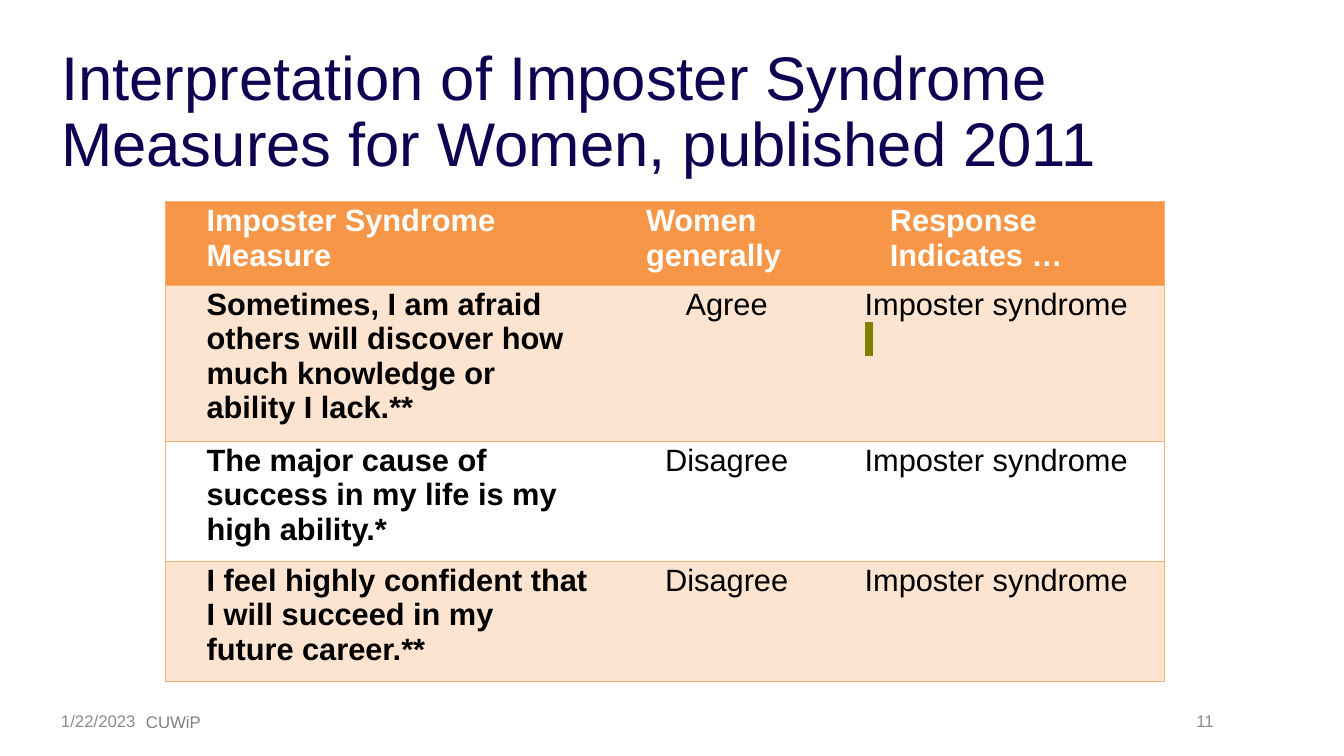
"""Build the slide on imposter syndrome measures for women."""
from dataclasses import dataclass

from lxml import etree
from pptx import Presentation
from pptx import util as u
from pptx.dml import color as dml
from pptx.enum import text as t
from pptx.oxml import ns

Pt = u.Pt
Align = t.PP_ALIGN
Anchor = t.MSO_ANCHOR


@dataclass(frozen=True)
class Theme:
    font: str = "Arial"
    title: str = "0F0051"
    head: str = "F79646"
    band: str = "FDE4D0"
    plain: str = "FFFFFF"
    ink: str = "000000"
    rule: str = "F9B074"
    mark: str = "808000"
    date: str = "8C8C8C"
    event: str = "808080"
    large: float = 44
    mid: float = 22
    small: float = 12


@dataclass(frozen=True)
class Box:
    left: float
    top: float
    width: float
    height: float


@dataclass(frozen=True)
class Note:
    words: str
    box: Box
    color: str
    align: Align = Align.LEFT
    anchor: Anchor = Anchor.MIDDLE


@dataclass(frozen=True)
class Row:
    height: float
    fill: str
    words: tuple[str, str, str]
    marked: bool = False


LOOK = Theme()
TITLE = "Interpretation of Imposter Syndrome Measures for Women, published 2011"
TITLE_BOX = Box(36.5, 29, 875.5, 104.5)
GRID = Box(118.1, 144, 713.5, 342.7)
COLS = (313.9, 174.2, 225.4)
NOTES = (
    Note("1/22/2023", Box(36.5, 500.5, 216, 28.8), LOOK.date),
    Note("CUWiP", Box(97.2, 504.7, 324, 28.8), LOOK.event, anchor=Anchor.TOP),
    Note("11", Box(658, 500.5, 216, 28.8), LOOK.date, Align.RIGHT),
)
ROWS = (
    Row(59.8, LOOK.head, ("Imposter Syndrome Measure", "Women generally", "Response Indicates …")),
    Row(111.6, LOOK.band, ("Sometimes, I am afraid others will discover how much knowledge or ability I lack.**",
                           "Agree", "Imposter syndrome"), True),
    Row(85.7, LOOK.plain, ("The major cause of success in my life is my high ability.*",
                           "Disagree", "Imposter syndrome")),
    Row(85.7, LOOK.band, ("I feel highly confident that I will succeed in my future career.**",
                          "Disagree", "Imposter syndrome")),
)


def place(shape, box: Box) -> None:
    shape.left, shape.top = Pt(box.left), Pt(box.top)
    shape.width, shape.height = Pt(box.width), Pt(box.height)


def write(para, words: str, size: float, color: str, bold: bool = False):
    run = para.add_run()
    run.text = words
    font = run.font
    font.size, font.bold, font.name = Pt(size), bold, LOOK.font
    font.color.rgb = dml.RGBColor.from_string(color)
    return run


def tint(parent, tag: str, color: str):
    node = etree.SubElement(parent, ns.qn(tag))
    etree.SubElement(node, ns.qn("a:srgbClr"), val=color)
    return node


def mark(run, color: str) -> None:
    props = run.font.fill._xPr
    props.find(ns.qn("a:solidFill")).addnext(tint(props, "a:highlight", color))


def edge(cell, col: int) -> None:
    props = cell._tc.get_or_add_tcPr()
    shown = {"L": col == 0, "R": col == len(COLS) - 1, "T": True, "B": True}
    for spot, (side, seen) in enumerate(shown.items()):
        line = etree.Element(ns.qn(f"a:ln{side}"), w=str(Pt(1)))
        if seen:
            tint(line, "a:solidFill", LOOK.rule)
        else:
            etree.SubElement(line, ns.qn("a:noFill"))
        props.insert(spot, line)


def fill_cell(cell, row: Row, col: int) -> None:
    head = row is ROWS[0]
    cell.fill.solid()
    cell.fill.fore_color.rgb = dml.RGBColor.from_string(row.fill)
    cell.margin_left = cell.margin_right = Pt(11.5)
    cell.margin_top, cell.margin_bottom = Pt(1.5), Pt(0)
    cell.vertical_anchor = Anchor.TOP
    edge(cell, col)
    para = cell.text_frame.paragraphs[0]
    if head or col == 0:
        para._p.get_or_add_pPr().set("marL", str(Pt(18)))
    para.alignment = Align.CENTER if col == 1 and not head else Align.LEFT
    color = LOOK.plain if head else LOOK.ink
    write(para, row.words[col], LOOK.mid, color, head or col == 0)
    if row.marked and col == 2:
        extra = cell.text_frame.add_paragraph()
        mark(write(extra, " ", LOOK.mid, color), LOOK.mark)


def draw_title(slide) -> None:
    shape = slide.shapes.title
    place(shape, TITLE_BOX)
    frame = shape.text_frame
    frame.word_wrap, frame.auto_size = True, t.MSO_AUTO_SIZE.NONE
    frame.vertical_anchor = Anchor.MIDDLE
    para = frame.paragraphs[0]
    para.alignment, para.line_spacing = Align.LEFT, 0.9
    write(para, TITLE, LOOK.large, LOOK.title)


def draw_note(slide, note: Note) -> None:
    box = note.box
    frame = slide.shapes.add_textbox(
        Pt(box.left), Pt(box.top), Pt(box.width), Pt(box.height)).text_frame
    frame.word_wrap, frame.vertical_anchor = True, note.anchor
    para = frame.paragraphs[0]
    para.alignment, para.space_after = note.align, Pt(6)
    write(para, note.words, LOOK.small, note.color)


def draw_grid(slide) -> None:
    table = slide.shapes.add_table(
        len(ROWS), len(COLS), Pt(GRID.left), Pt(GRID.top), Pt(GRID.width), Pt(GRID.height)).table
    for col, width in enumerate(COLS):
        table.columns[col].width = Pt(width)
    for index, row in enumerate(ROWS):
        table.rows[index].height = Pt(row.height)
        for col in range(len(COLS)):
            fill_cell(table.cell(index, col), row, col)


def main() -> None:
    deck = Presentation()
    deck.slide_width, deck.slide_height = Pt(960), Pt(540)
    slide = deck.slides.add_slide(deck.slide_layouts[5])
    draw_title(slide)
    for note in NOTES:
        draw_note(slide, note)
    draw_grid(slide)
    deck.save("out.pptx")


if __name__ == "__main__":
    main()
